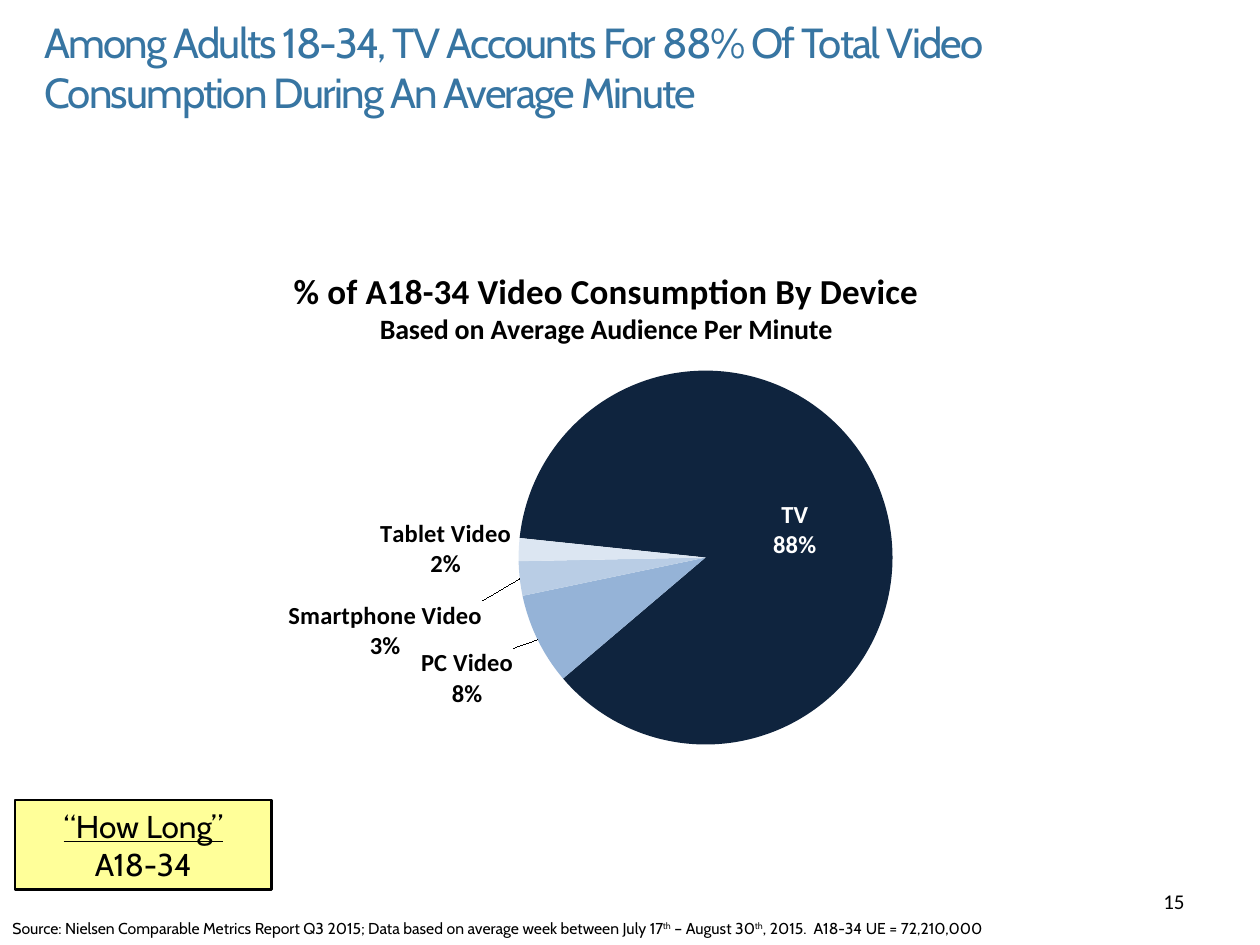
import lxml.etree
import pptx
import pptx.chart.data
import pptx.dml.color
import pptx.enum.chart
import pptx.enum.shapes
import pptx.enum.text
import pptx.oxml
import pptx.oxml.ns
import pptx.util
from pptx.util import Cm

COLORS = {
    "title": "3775A2", "text": "000000", "light": "FFFFFF", "note": "FFFF99",
    "tv": "0F243E", "pc": "95B3D7", "phone": "B9CDE5", "tablet": "DCE6F2",
}
DEVICES = [
    ("TV", 88, "tv", "light", None),
    ("PC Video", 8, "pc", "text", (-0.014, 0.01)),
    ("Smartphone Video", 3, "phone", "text", (-0.024, 0.04)),
    ("Tablet Video", 2, "tablet", "text", None),
]
LABEL_FORMAT = '0"%"'
ALIGN = pptx.enum.text.PP_ALIGN
ANCHOR = pptx.enum.text.MSO_ANCHOR


def rgb(name):
    return pptx.dml.color.RGBColor.from_string(COLORS[name])


def set_font(font, size, color="text", name="Cabin", bold=False):
    font.name = name
    font.size = pptx.util.Pt(size)
    font.bold = bold
    font.color.rgb = rgb(color)


def write(p, text, size, align=ALIGN.LEFT, color="text", name="Cabin"):
    p.alignment = align
    for i, part in enumerate(text.split("^")):
        r = p.add_run()
        r.text = part
        if i % 2:
            r.font._element.set("baseline", "30000")
    set_font(p.font, size, color, name)


def add_title(s, text):
    sp = s.shapes.title
    sp.left, sp.top, sp.width, sp.height = Cm(0.64), Cm(0.2), Cm(20.88), Cm(2.31)
    tf = sp.text_frame
    tf.word_wrap = True
    tf.auto_size = pptx.enum.text.MSO_AUTO_SIZE.NONE
    tf.vertical_anchor = ANCHOR.TOP
    p = tf.paragraphs[0]
    write(p, text, 24, color="title")
    p.runs[0].font._element.set("spc", "-100")


def add_text(s, box, text, size, align=ALIGN.LEFT, name="Cabin", anchor=ANCHOR.TOP):
    tf = s.shapes.add_textbox(*box).text_frame
    tf.word_wrap = True
    tf.vertical_anchor = anchor
    write(tf.paragraphs[0], text, size, align, name=name)


def add_note(s, box, heading, audience):
    sp = s.shapes.add_shape(pptx.enum.shapes.MSO_SHAPE.RECTANGLE, *box)
    sp.shadow.inherit = False
    sp.fill.solid()
    sp.fill.fore_color.rgb = rgb("note")
    sp.line.color.rgb = rgb("text")
    sp.line.width = pptx.util.Pt(1.5)
    tf = sp.text_frame
    tf.word_wrap = True
    write(tf.paragraphs[0], heading, 18, ALIGN.CENTER)
    tf.paragraphs[0].runs[0].font.underline = True
    write(tf.add_paragraph(), audience, 18, ALIGN.CENTER)


def make_layout(**values):
    layout = pptx.oxml.parse_xml(
        f'<c:layout {pptx.oxml.ns.nsdecls("c")}><c:manualLayout/></c:layout>')
    for tag, value in values.items():
        lxml.etree.SubElement(layout[0], pptx.oxml.ns.qn(f"c:{tag}"), val=str(value))
    return layout


def replace_layout(parent, layout, index):
    for old in parent.findall(pptx.oxml.ns.qn("c:layout")):
        parent.remove(old)
    parent.insert(index, layout)


def add_chart_title(chart, lines):
    tf = chart.chart_title.text_frame
    for i, (text, size) in enumerate(lines):
        p = tf.paragraphs[0] if i == 0 else tf.add_paragraph()
        r = p.add_run()
        r.text = text
        set_font(p.font, size, name="Calibri", bold=True)
        set_font(r.font, size, name="Calibri", bold=True)
    layout = make_layout(xMode="edge", yMode="edge", x=0.23, y=0.05)
    replace_layout(chart.chart_title._element, layout, 1)
    chart.chart_title.include_in_layout = False


def format_label(point, color, offset):
    label = point.data_label
    set_font(label.font, 14, color, "Calibri", True)
    positions = pptx.enum.chart.XL_LABEL_POSITION
    label.position = positions.CENTER if color == "light" else positions.OUTSIDE_END
    d = label.font._element.xpath("ancestor::c:dLbl")[0]
    d.xpath("c:showCatName")[0].set("val", "1")
    number = lxml.etree.Element(pptx.oxml.ns.qn("c:numFmt"),
                                formatCode=LABEL_FORMAT, sourceLinked="0")
    d.insert(1, number)
    if offset:
        d.insert(1, make_layout(x=offset[0], y=offset[1]))
    lxml.etree.SubElement(d, pptx.oxml.ns.qn("c:separator")).text = "\n"


def add_pie(s, box):
    data = pptx.chart.data.CategoryChartData(number_format="#,##0")
    data.categories = [device[0] for device in DEVICES]
    data.add_series("Series 1", [device[1] for device in DEVICES])
    chart = s.shapes.add_chart(pptx.enum.chart.XL_CHART_TYPE.PIE, *box, data).chart
    set_font(chart.font, 18, name="Calibri")
    chart.has_legend = False
    add_chart_title(chart, [("% of A18-34 Video Consumption By Device", 20),
                            ("Based on Average Audience Per Minute", 16)])
    plot = chart.plots[0]
    plot.vary_by_categories = True
    series = plot.series[0]
    labels = series.data_labels
    set_font(labels.font, 14, name="Calibri", bold=True)
    labels.number_format = LABEL_FORMAT
    labels.number_format_is_linked = False
    labels.show_category_name = True
    labels.show_value = True
    for i, (_, _, fill, color, offset) in enumerate(DEVICES):
        point = series.points[i]
        point.format.fill.solid()
        point.format.fill.fore_color.rgb = rgb(fill)
        format_label(point, color, offset)
    element = labels._element
    for leader in element.xpath("c:showLeaderLines"):
        element.remove(leader)
    lxml.etree.SubElement(element, pptx.oxml.ns.qn("c:separator")).text = "\n"
    lxml.etree.SubElement(element, pptx.oxml.ns.qn("c:showLeaderLines"), val="1")
    pie = plot._element
    for angle in pie.xpath("c:firstSliceAng"):
        pie.remove(angle)
    lxml.etree.SubElement(pie, pptx.oxml.ns.qn("c:firstSliceAng"), val="276")
    layout = make_layout(layoutTarget="inner", xMode="edge", yMode="edge",
                         x=0.41, y=0.25, w=0.3, h=0.7)
    replace_layout(pie.getparent(), layout, 0)


def main():
    prs = pptx.Presentation()
    prs.slide_width, prs.slide_height = Cm(25.4), Cm(19.05)
    s = prs.slides.add_slide(prs.slide_layouts[5])
    add_note(s, (Cm(0.3), Cm(16.13), Cm(5.18), Cm(1.8)), "“How Long”", "A18-34")
    add_title(s, "Among Adults 18-34, TV Accounts For 88% Of Total Video "
                 "Consumption During An Average Minute")
    add_pie(s, (Cm(0), Cm(4.78), Cm(25.4), Cm(10.77)))
    add_text(s, (Cm(0), Cm(18.39), Cm(25.4), Cm(0.64)),
             "Source: Nielsen Comparable Metrics Report Q3 2015; Data based on average "
             "week between July 17^th^ – August 30^th^, 2015.  A18-34 UE = 72,210,000", 9)
    add_text(s, (Cm(18.21), Cm(17.65), Cm(5.92), Cm(1.02)), "15", 12,
             ALIGN.RIGHT, "Calibri", ANCHOR.MIDDLE)
    prs.save("out.pptx")


if __name__ == "__main__":
    main()
